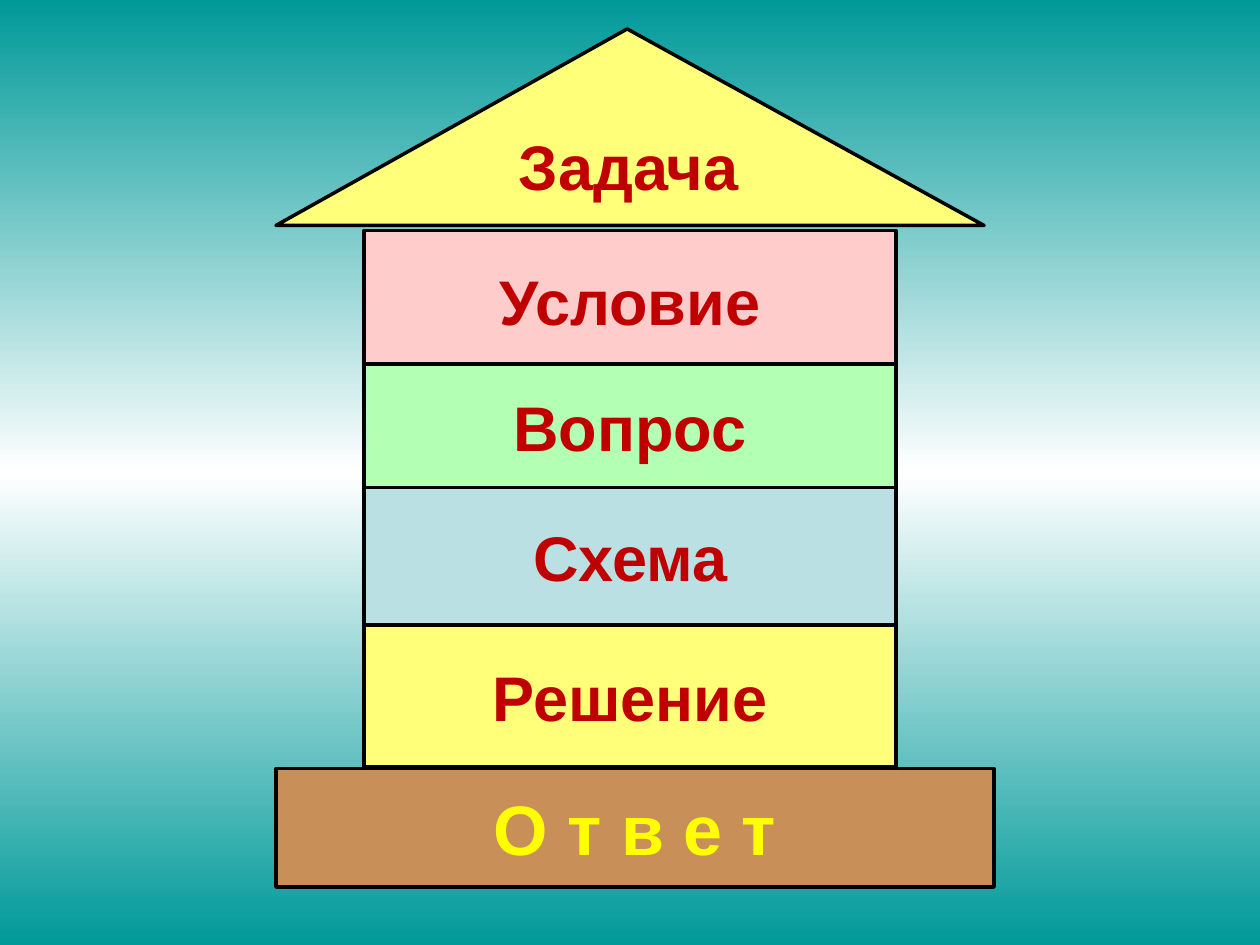
"""Builds a slide with a house whose storeys are the parts of a maths problem."""
from copy import deepcopy
from dataclasses import dataclass

from pptx import Presentation
from pptx.dml.color import RGBColor
from pptx.enum.shapes import MSO_SHAPE
from pptx.enum.text import MSO_ANCHOR, PP_ALIGN
from pptx.oxml.ns import qn
from pptx.util import Inches, Pt

RECTANGLE = MSO_SHAPE.RECTANGLE
TRIANGLE = MSO_SHAPE.ISOSCELES_TRIANGLE
MIDDLE = MSO_ANCHOR.MIDDLE
TOP = MSO_ANCHOR.TOP
CENTER = PP_ALIGN.CENTER

TEAL = RGBColor(0x00, 0x99, 0x99)
WHITE = RGBColor(0xFF, 0xFF, 0xFF)
BLACK = RGBColor(0x00, 0x00, 0x00)
PINK = RGBColor(0xFF, 0xCC, 0xCC)
GREEN = RGBColor(0xB3, 0xFF, 0xB3)
BLUE = RGBColor(0xBB, 0xE0, 0xE3)
CREAM = RGBColor(0xFF, 0xFF, 0x79)
BROWN = RGBColor(0xC8, 0x90, 0x58)
RED = RGBColor(0xC0, 0x00, 0x00)
YELLOW = RGBColor(0xFF, 0xFF, 0x00)

WALL_LEFT, WALL_WIDTH = 2.89, 4.22
EAVES_LEFT = 2.19


@dataclass(frozen=True)
class Part:
    """One labelled part of the house, measured in inches."""

    label: str
    left: float
    top: float
    width: float
    height: float
    fill: RGBColor
    color: RGBColor = RED
    size: int = 36
    preset: int = RECTANGLE
    anchor: int = MIDDLE


def storey(label: str, top: float, bottom: float, fill: RGBColor) -> Part:
    """Return a storey that spans the walls from top to bottom."""
    return Part(label, WALL_LEFT, top, WALL_WIDTH, bottom - top, fill)


HOUSE = (
    storey("Условие", 1.83, 2.93, PINK),
    Part("Задача", EAVES_LEFT, 0.23, 5.62, 1.56, CREAM, preset=TRIANGLE, anchor=TOP),
    storey("Вопрос", 2.89, 3.88, GREEN),
    storey("Схема", 3.87, 4.96, BLUE),
    storey("Решение", 4.96, 6.09, CREAM),
    Part("О т в е т", EAVES_LEFT, 6.1, 5.7, 0.94, BROWN, YELLOW, 40),
)


def paint_background(page) -> None:
    """Fill the page with a vertical teal, white, teal gradient."""
    fill = page.background.fill
    fill.gradient()
    fill.gradient_angle = 270
    stop_list = next(page.element.iter(qn("a:gsLst")))
    stop_list.append(deepcopy(stop_list[-1]))
    for stop, position, color in zip(
        fill.gradient_stops, (0, 0.5, 1), (TEAL, WHITE, TEAL)
    ):
        stop.position = position
        stop.color.rgb = color


def draw_part(page, part: Part) -> None:
    """Draw one outlined part with its bold label."""
    box = page.shapes.add_shape(
        part.preset,
        Inches(part.left),
        Inches(part.top),
        Inches(part.width),
        Inches(part.height),
    )
    box.shadow.inherit = False
    box.fill.solid()
    box.fill.fore_color.rgb = part.fill
    box.line.color.rgb = BLACK
    box.line.width = Pt(2)
    if part.preset == TRIANGLE:
        box.adjustments[0] = 0.496
    frame = box.text_frame
    frame.word_wrap = False
    frame.vertical_anchor = part.anchor
    if part.anchor == TOP:
        frame.margin_top = 0
    para = frame.paragraphs[0]
    para.alignment = CENTER
    span = para.add_run()
    span.text = part.label
    span.font.name = "Arial"
    span.font.size = Pt(part.size)
    span.font.bold = True
    span.font.color.rgb = part.color


def main() -> None:
    """Build and save the deck."""
    deck = Presentation()
    deck.slide_width, deck.slide_height = Inches(10), Inches(7.5)
    page = deck.slides.add_slide(deck.slide_layouts.get_by_name("Blank"))
    paint_background(page)
    for part in HOUSE:
        draw_part(page, part)
    deck.save("out.pptx")


if __name__ == "__main__":
    main()
